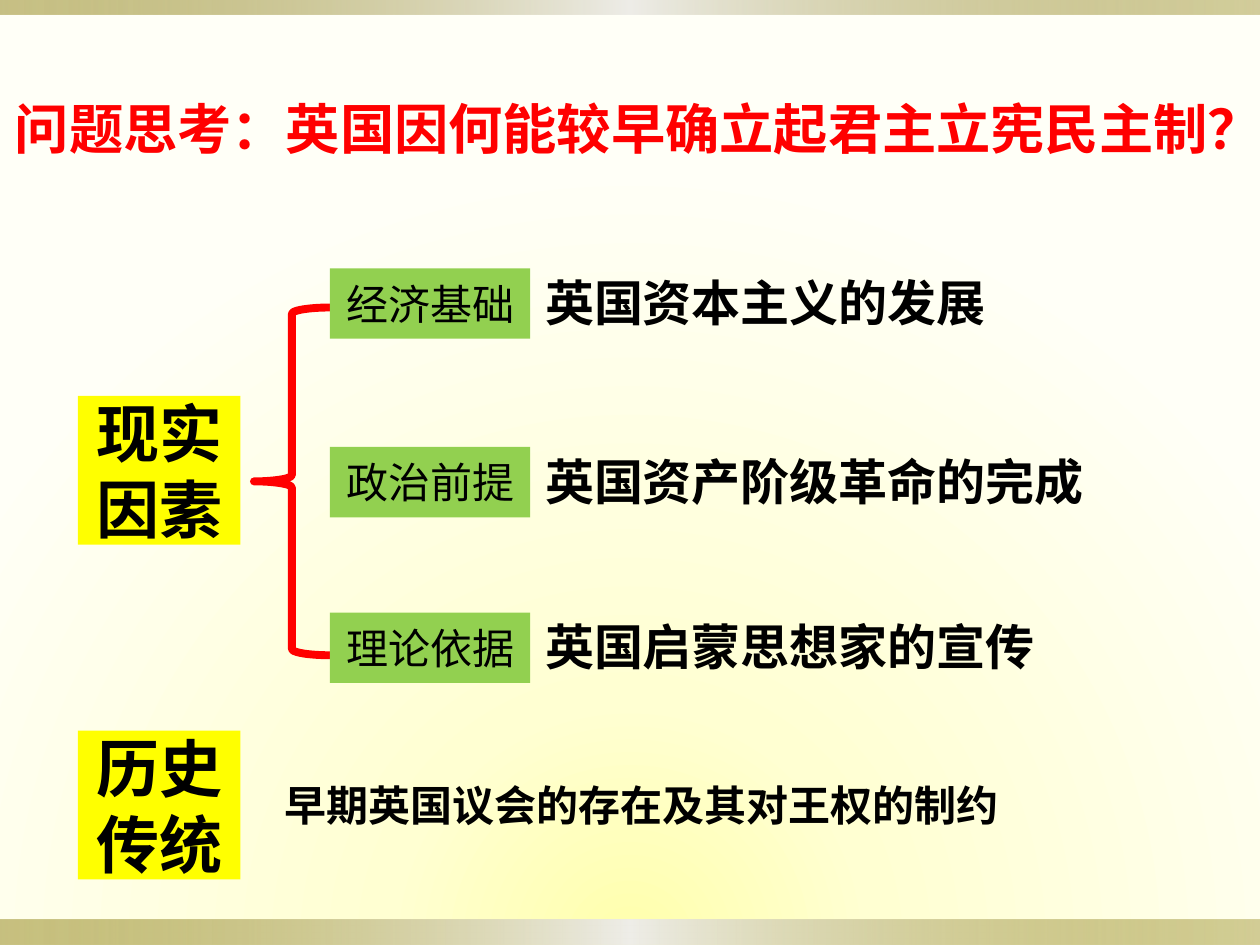
from lxml.etree import SubElement
from pptx import Presentation
from pptx.dml.color import RGBColor
from pptx.enum.shapes import MSO_SHAPE
from pptx.enum.text import MSO_ANCHOR, PP_ALIGN
from pptx.oxml.ns import qn
from pptx.util import Cm, Pt

BLACK = RGBColor(0x00, 0x00, 0x00)
RED = RGBColor(0xFF, 0x00, 0x00)
YELLOW = RGBColor(0xFF, 0xFF, 0x00)
GREEN = RGBColor(0x92, 0xD0, 0x50)
OLIVE = RGBColor(0x91, 0x84, 0x15)
SILVER = RGBColor(0xEE, 0xED, 0xE8)
GLOW = RGBColor(0xFF, 0xFF, 0xAC)
CREAM = RGBColor(0xFF, 0xFF, 0xD2)
IVORY = RGBColor(0xFF, 0xFF, 0xF7)

CJK_FONT = "Noto Sans CJK SC"
SLIDE_WIDTH, SLIDE_HEIGHT = 25.4, 19.05
LABEL_WIDTH, LABEL_HEIGHT = 4.04, 1.42
HEADING_WIDTH, HEADING_HEIGHT = 3.28, 3

REASONS = [
    ("经济基础", "英国资本主义的发展", 0),
    ("政治前提", "英国资产阶级革命的完成", 3.6),
    ("理论依据", "英国启蒙思想家的宣传", 6.94),
]


def set_gradient(fill, stops):
    fill.gradient()
    gradient = fill._xPr.find(qn("a:gradFill"))
    for child in list(gradient):
        gradient.remove(child)
    stop_list = SubElement(gradient, qn("a:gsLst"))
    for position, color, opacity in stops:
        stop = SubElement(stop_list, qn("a:gs"), pos=str(position * 1000))
        shade = SubElement(stop, qn("a:srgbClr"), val=str(color))
        if opacity < 100:
            SubElement(shade, qn("a:alpha"), val=str(opacity * 1000))
    return gradient


def add_block(slide, shape_type, left, top, width, height):
    block = slide.shapes.add_shape(
        shape_type, Cm(left), Cm(top), Cm(width), Cm(height))
    block.shadow.inherit = False
    block.line.fill.background()
    return block


def write(shape, text, size, color=BLACK, bold=True, font=CJK_FONT,
          align=PP_ALIGN.LEFT):
    frame = shape.text_frame
    frame.text = text
    frame.word_wrap = True
    frame.vertical_anchor = MSO_ANCHOR.MIDDLE
    frame.margin_top = frame.margin_bottom = 0
    for paragraph in frame.paragraphs:
        paragraph.alignment = align
        for run in paragraph.runs:
            run.font.size = Pt(size)
            run.font.bold = bold
            run.font.color.rgb = color
            run.font.name = font
            SubElement(run.font._element, qn("a:ea"), typeface=CJK_FONT)


def add_caption(slide, text, size, left, top, width, height, **style):
    caption = slide.shapes.add_textbox(
        Cm(left), Cm(top), Cm(width), Cm(height))
    write(caption, text, size, **style)
    return caption


def add_tag(slide, text, size, color, left, top, width, height, bold):
    tag = add_block(slide, MSO_SHAPE.RECTANGLE, left, top, width, height)
    tag.fill.solid()
    tag.fill.fore_color.rgb = color
    write(tag, text, size, bold=bold, align=PP_ALIGN.CENTER)
    tag.text_frame.margin_left = tag.text_frame.margin_right = 0


def add_heading(slide, text, left, top):
    add_tag(slide, text, 36, YELLOW, left, top,
            HEADING_WIDTH, HEADING_HEIGHT, True)


def add_backdrop(slide):
    glow = set_gradient(slide.background.fill, [
        (0, GLOW, 100), (31, CREAM, 100), (100, IVORY, 100)])
    circle = SubElement(glow, qn("a:path"), path="circle")
    SubElement(circle, qn("a:fillToRect"),
               l="50000", t="150000", r="50000", b="0")
    for top, height in [(SLIDE_HEIGHT - 0.51, 0.51), (0, 0.3)]:
        band = add_block(slide, MSO_SHAPE.RECTANGLE,
                         0, top, SLIDE_WIDTH, height)
        sheen = set_gradient(band.fill, [
            (0, OLIVE, 50), (50, SILVER, 100), (100, OLIVE, 40)])
        SubElement(sheen, qn("a:lin"), ang="0", scaled="0")


def add_question(slide, left, top, width, height):
    question = add_caption(
        slide, "问题思考：英国因何能较早确立起君主立宪民主制？", 31,
        left, top, width, height, color=RED, font="Arial")
    question.text_frame.word_wrap = False
    question.text_frame.margin_right = 0


def add_present_factors(slide, left, top, width):
    add_heading(slide, "现实\n因素", left, top + 2.57)
    brace = add_block(slide, MSO_SHAPE.LEFT_BRACE,
                      left + 3.55, top + 0.79, 1.53, 7.01)
    brace.fill.background()
    brace.line.color.rgb = RED
    brace.line.width = Pt(4.5)
    label_left = left + 5.08
    reason_left = label_left + LABEL_WIDTH + 0.05
    for label, reason, offset in REASONS:
        add_tag(slide, label, 24, GREEN, label_left, top + offset,
                LABEL_WIDTH, LABEL_HEIGHT, False)
        add_caption(slide, reason, 28, reason_left, top + offset + 0.02,
                    left + width - reason_left, 1.32)


def add_tradition(slide, left, top, width):
    add_heading(slide, "历史\n传统", left, top)
    add_caption(slide, "早期英国议会的存在及其对王权的制约", 24,
                left + 3.91, top + 0.84, width - 3.91, 1.32)


def main():
    presentation = Presentation()
    presentation.slide_width = Cm(SLIDE_WIDTH)
    presentation.slide_height = Cm(SLIDE_HEIGHT)
    slide = presentation.slides.add_slide(presentation.slide_layouts[6])
    add_backdrop(slide)
    add_present_factors(slide, 1.57, 5.41, 22.8)
    add_tradition(slide, 1.57, 14.73, 19.3)
    add_question(slide, 0.05, 1.8, 25.32, 1.57)
    presentation.save("out.pptx")


if __name__ == "__main__":
    main()
